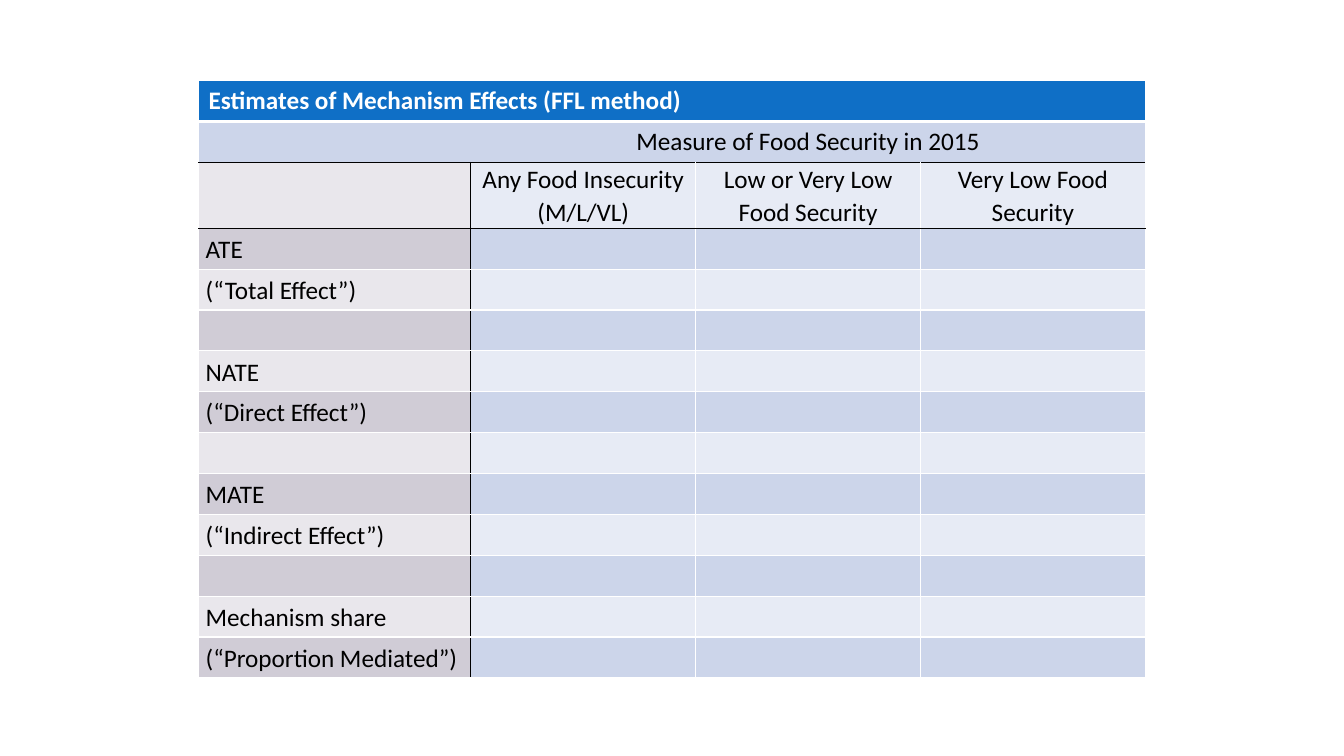
from lxml import etree
from pptx import Presentation
from pptx import util as u
from pptx.dml.color import RGBColor
from pptx.enum import text as t
from pptx.oxml import ns

WHITE, BLACK, BLUE = "FFFFFF", "000000", "0F6FC6"
LABEL_BANDS = ("E9E7EC", "D0CCD6")
VALUE_BANDS = ("E7EBF5", "CCD5EA")
COLUMN_WIDTHS = (2.7, 2.23, 2.23, 2.23)
ROW_HEIGHT = 0.4
TITLE = "Estimates of Mechanism Effects (FFL method)"
MEASURE = "Measure of Food Security in 2015"
HEADINGS = ("Any Food Insecurity\v(M/L/VL)", "Low or Very Low Food Security",
            "Very Low Food Security")
LABELS = ("ATE", "(“Total Effect”)", "", "NATE", "(“Direct Effect”)", "",
          "MATE", "(“Indirect Effect”)", "", "Mechanism share",
          "(“Proportion Mediated”)")
FIRST_LABEL_ROW = 3
ROWS = FIRST_LABEL_ROW + len(LABELS)
COLUMNS = len(COLUMN_WIDTHS)


def rgb(code):
    """Turn a hex string into a colour."""
    return RGBColor.from_string(code)


def write(cell, text, color=BLACK, bold=False, align=t.PP_ALIGN.LEFT,
          anchor=t.MSO_ANCHOR.MIDDLE, spacing=None, tight=False):
    """Put formatted text in a cell."""
    cell.vertical_anchor = anchor
    if tight:
        cell.margin_left = cell.margin_right = u.Inches(0.07)
        cell.margin_top = cell.margin_bottom = 0
    para = cell.text_frame.paragraphs[0]
    para.text = text
    para.alignment = align
    para.line_spacing = spacing
    for span in para.runs:
        span.font.name, span.font.size = "Calibri", u.Pt(18)
        span.font.bold = bold
        span.font.color.rgb = rgb(color)


def add_border(cell, side, color, width=1):
    """Draw one side of a cell, or clear it when there is no colour."""
    properties = cell._tc.get_or_add_tcPr()
    line = etree.SubElement(properties, ns.qn(f"a:ln{side}"), w=str(u.Pt(width)))
    if color:
        fill = etree.SubElement(line, ns.qn("a:solidFill"))
        etree.SubElement(fill, ns.qn("a:srgbClr"), val=color)
    else:
        etree.SubElement(line, ns.qn("a:noFill"))


def vertical_color(row, edge):
    """Give the colour of a vertical grid line beside a row."""
    if edge in (0, COLUMNS):
        return WHITE
    if row < 2:
        return None
    return BLACK if edge == 1 else WHITE


def cell_fill(row, column):
    """Give the banded fill of a cell."""
    if row == 0:
        return BLUE
    bands = LABEL_BANDS if column == 0 and row > 1 else VALUE_BANDS
    return bands[row % 2]


def style_cell(cell, row, column):
    """Draw the borders and fill of a cell."""
    for side, edge in (("L", column), ("R", column + 1)):
        add_border(cell, side, vertical_color(row, edge))
    for side, edge in (("T", row), ("B", row + 1)):
        add_border(cell, side, BLACK if edge in (2, 3) else WHITE,
                   3 if edge == 1 else 1)
    cell.fill.solid()
    cell.fill.fore_color.rgb = rgb(cell_fill(row, column))


def add_grid(page):
    """Add the styled, empty table to the page."""
    table = page.shapes.add_table(
        ROWS, COLUMNS, u.Inches(1.97), u.Inches(0.8),
        u.Inches(sum(COLUMN_WIDTHS)), u.Inches(ROWS * ROW_HEIGHT)).table
    table.first_row = table.horz_banding = False
    for column, width in zip(table.columns, COLUMN_WIDTHS):
        column.width = u.Inches(width)
    for row in range(ROWS):
        table.rows[row].height = u.Inches(ROW_HEIGHT)
        for column in range(COLUMNS):
            style_cell(table.cell(row, column), row, column)
    table.cell(0, 0).merge(table.cell(0, COLUMNS - 1))
    table.cell(1, 1).merge(table.cell(1, COLUMNS - 1))
    return table


def main():
    """Build the slide and save the deck."""
    deck = Presentation()
    deck.slide_width, deck.slide_height = u.Inches(13.33), u.Inches(7.5)
    page = deck.slides.add_slide(deck.slide_layouts[6])
    table = add_grid(page)
    write(table.cell(0, 0), TITLE, color=WHITE, bold=True, anchor=t.MSO_ANCHOR.TOP)
    write(table.cell(1, 1), MEASURE, align=t.PP_ALIGN.CENTER)
    for column, heading in enumerate(HEADINGS, 1):
        write(table.cell(2, column), heading, align=t.PP_ALIGN.CENTER,
              anchor=t.MSO_ANCHOR.BOTTOM, spacing=1.07, tight=True)
    for row, label in enumerate(LABELS, FIRST_LABEL_ROW):
        if label:
            write(table.cell(row, 0), label, spacing=1.07, tight=True)
    deck.save("out.pptx")


if __name__ == "__main__":
    main()
